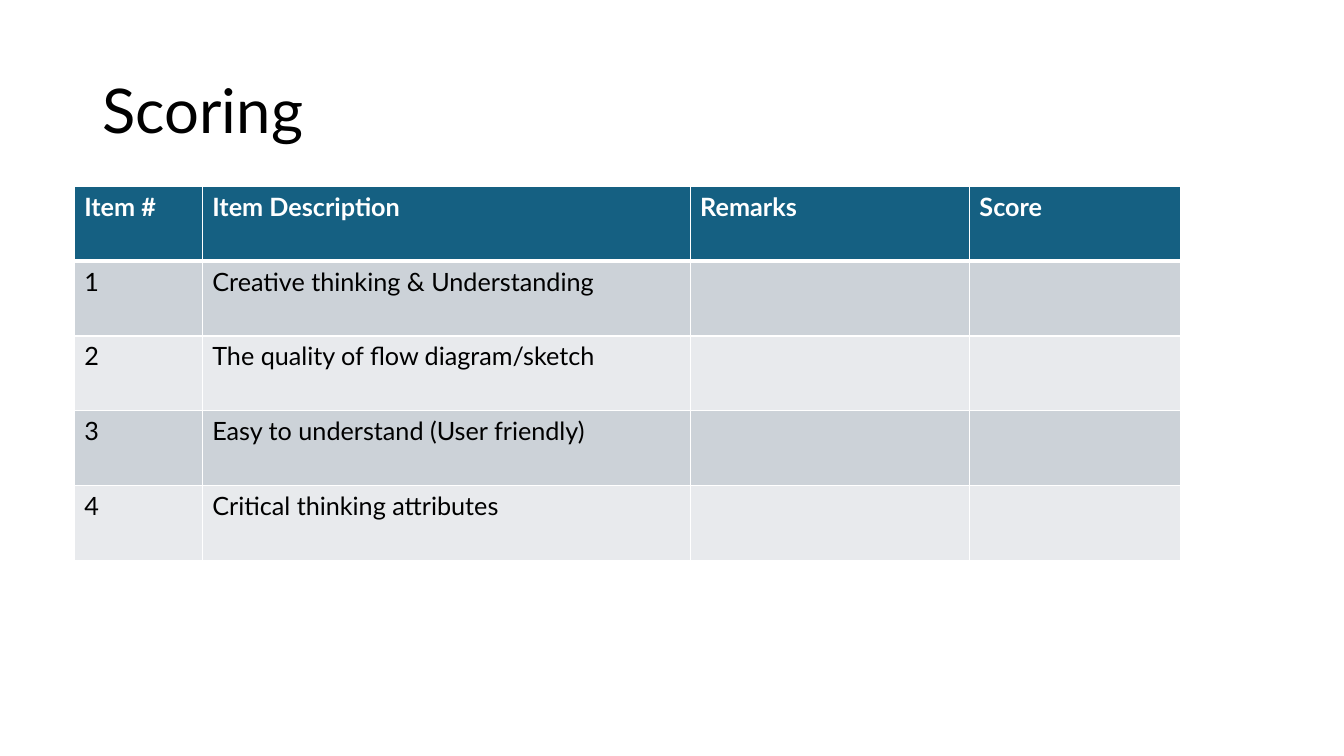
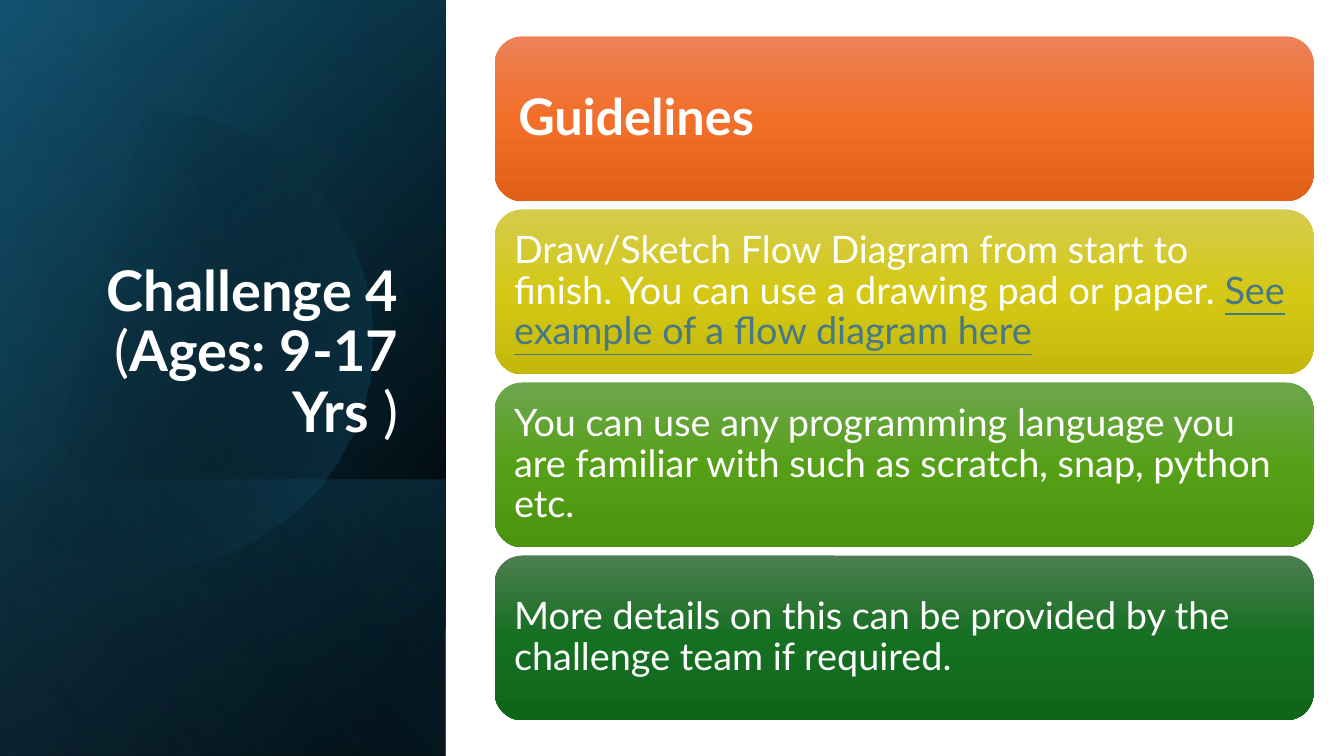
import math

import pptx
import pptx.util
import pptx.dml.color
import pptx.enum.shapes
import pptx.enum.text
import pptx.oxml
import pptx.oxml.ns

Pt = pptx.util.Pt
RGBColor = pptx.dml.color.RGBColor
Shape = pptx.enum.shapes.MSO_SHAPE
Anchor = pptx.enum.text.MSO_ANCHOR
Align = pptx.enum.text.PP_ALIGN
qn = pptx.oxml.ns.qn

# Shared style
FONT = "Lato"
SLIDE_W, SLIDE_H = 960, 540
TITLE_ONLY = 5
BLACK = RGBColor(0x00, 0x00, 0x00)
WHITE = RGBColor(0xFF, 0xFF, 0xFF)
TEAL = RGBColor(0x15, 0x60, 0x82)
DEEP_TEAL = RGBColor(0x10, 0x48, 0x62)
SKY = RGBColor(0x46, 0xB1, 0xE1)
LINK = RGBColor(0x46, 0x78, 0x86)
ROW_DARK = RGBColor(0xCC, 0xD2, 0xD8)
ROW_LIGHT = RGBColor(0xE8, 0xEA, 0xED)
ORANGES = [RGBColor(0xED, 0x82, 0x57), RGBColor(0xF2, 0x6E, 0x29), RGBColor(0xE2, 0x5F, 0x1A)]
YELLOWS = [RGBColor(0xD5, 0xCB, 0x4E), RGBColor(0xD4, 0xC8, 0x15), RGBColor(0xC4, 0xB9, 0x0B)]
LIMES = [RGBColor(0x6D, 0xA6, 0x4E), RGBColor(0x56, 0xA0, 0x17), RGBColor(0x4C, 0x93, 0x0F)]
GREENS = [RGBColor(0x4D, 0x7E, 0x50), RGBColor(0x15, 0x6F, 0x21), RGBColor(0x0F, 0x66, 0x1B)]

# Content
SCORING_ROWS = [
    ["Item #", "Item Description", "Remarks", "Score"],
    ["1", "Creative thinking & Understanding", "", ""],
    ["2", "The quality of flow diagram/sketch", "", ""],
    ["3", "Easy to understand (User friendly)", "", ""],
    ["4", "Critical thinking attributes", "", ""],
]
SCORING_COLUMNS = [91.5, 348.5, 199.5, 150.5]
CHALLENGE = [("Challenge 4", {"bold": True}), (" (", {}),
             ("Ages: 9-17 Yrs", {"bold": True}), (" )", {})]
HEADING = {"size": 36, "inset": 11}
GUIDELINES = [
    (ORANGES, [("Guidelines", {"bold": True})], HEADING),
    (YELLOWS, [("Draw/Sketch Flow Diagram from start to finish. "
                "You can use a drawing pad or paper. ", {}),
               ("See example of a flow diagram here",
                {"color": LINK, "underline": True})], {}),
    (LIMES, [("You can use any programming language you are familiar with "
              "such as scratch, snap, python etc.", {})], {}),
    (GREENS, [("More details on this can be provided by the challenge team "
               "if required.", {})], {}),
]


def write_text(frame, runs, size=18, color=BLACK, align=Align.LEFT, spacing=None):
    """Fill the frame with one paragraph of (text, overrides) runs."""
    paragraph = frame.paragraphs[0]
    paragraph.alignment = align
    paragraph.line_spacing = spacing
    for text, overrides in runs:
        run = paragraph.add_run()
        run.text = text
        font = run.font
        font.name, font.size = FONT, Pt(size)
        font.bold = overrides.get("bold", False)
        font.underline = overrides.get("underline")
        font.color.rgb = overrides.get("color", color)


def set_frame(frame, anchor, inset=None):
    frame.word_wrap = True
    frame.auto_size = pptx.enum.text.MSO_AUTO_SIZE.NONE
    frame.vertical_anchor = anchor
    if inset is not None:
        frame.margin_left = frame.margin_right = Pt(inset)
        frame.margin_top = frame.margin_bottom = Pt(inset)


def place(shape, box):
    shape.left, shape.top, shape.width, shape.height = map(Pt, box)


def fill_gradient(shape, stops, angle):
    """Stops are (position %, colour, opacity %); the angle runs clockwise."""
    shape.shadow.inherit = False
    shape.line.fill.background()
    shape.fill.gradient()
    gradient = shape._element.spPr.find(qn("a:gradFill"))
    stop_list = gradient.find(qn("a:gsLst"))
    stop_list.clear()
    for position, color, opacity in stops:
        stop_list.append(pptx.oxml.parse_xml(
            f'<a:gs {pptx.oxml.ns.nsdecls("a")} pos="{position * 1000}">'
            f'<a:srgbClr val="{color}"><a:alpha val="{opacity * 1000}"/>'
            '</a:srgbClr></a:gs>'))
    gradient.find(qn("a:lin")).set("ang", str(angle * 60000))


def add_title(slide, box, runs, anchor=Anchor.MIDDLE, **style):
    title = slide.shapes.title
    place(title, box)
    set_frame(title.text_frame, anchor)
    write_text(title.text_frame, runs, spacing=0.9, **style)
    # Bring the title in front of whatever is already on the slide
    slide.shapes._spTree.append(title._element)


def set_borders(cell, bottom):
    properties = cell._tc.get_or_add_tcPr()
    for side, width in (("L", 1), ("R", 1), ("T", 1), ("B", bottom)):
        properties.append(pptx.oxml.parse_xml(
            f'<a:ln{side} {pptx.oxml.ns.nsdecls("a")} w="{Pt(width)}">'
            f'<a:solidFill><a:srgbClr val="{WHITE}"/></a:solidFill></a:ln{side}>'))


def add_score_table(slide, box):
    table = slide.shapes.add_table(
        len(SCORING_ROWS), len(SCORING_COLUMNS), *map(Pt, box)).table
    for column, width in zip(table.columns, SCORING_COLUMNS):
        column.width = Pt(width)
    for r, row in enumerate(SCORING_ROWS):
        header = r == 0
        row_fill = TEAL if header else (ROW_LIGHT, ROW_DARK)[r % 2]
        for c, text in enumerate(row):
            cell = table.cell(r, c)
            set_borders(cell, bottom=3 if header else 1)
            cell.fill.solid()
            cell.fill.fore_color.rgb = row_fill
            if text:
                write_text(cell.text_frame, [(text, {"bold": header})],
                           color=WHITE if header else BLACK)


def add_disc(slide, center_x, center_y, radius, left_edge):
    """A disc cut off along the panel's left edge."""
    cut = math.acos((left_edge - center_x) / radius)
    steps = 120
    rim = []
    for i in range(steps + 1):
        turn = cut * (2 * i / steps - 1)
        rim.append((center_x + radius * math.cos(turn),
                    center_y + radius * math.sin(turn)))
    builder = slide.shapes.build_freeform(*rim[0], scale=Pt(1))
    builder.add_line_segments(rim[1:], close=True)
    fill_gradient(builder.convert_to_shape(),
                  [(29, BLACK, 0), (100, TEAL, 43)], 15)


def add_panel(slide, box):
    """Dark side panel made of layered gradients."""
    left, top, width, height = box

    def add_layer(start, stops, angle):
        layer = slide.shapes.add_shape(Shape.RECTANGLE, 0, 0, 0, 0)
        place(layer, (left, top + start, width, height - start))
        fill_gradient(layer, stops, angle)

    add_layer(0, [(8, BLACK, 100), (100, DEEP_TEAL, 100)], 220)
    add_layer(0, [(0, BLACK, 0), (99, TEAL, 46)], 240)
    add_layer(342.7, [(2, TEAL, 29), (100, BLACK, 30)], 140)
    add_disc(slide, left + 103, top + 242.6, 163.5, left)
    add_layer(0, [(0, BLACK, 0), (99, SKY, 11)], 150)


def add_guidelines(slide, box, gap=6):
    left, top, width, height = box
    card_height = (height + gap) / len(GUIDELINES) - gap
    for i, (shades, runs, style) in enumerate(GUIDELINES):
        card = slide.shapes.add_shape(Shape.ROUNDED_RECTANGLE, 0, 0, 0, 0)
        place(card, (left, top + i * (card_height + gap), width, card_height))
        fill_gradient(card, [(p, shade, 100) for p, shade in zip((0, 50, 100), shades)], 90)
        set_frame(card.text_frame, Anchor.MIDDLE, style.get("inset", 8))
        write_text(card.text_frame, runs, size=style.get("size", 27),
                   color=WHITE, spacing=0.9)


def build_scoring(slide):
    add_title(slide, (66, 28.75, 828, 104.4), [("Scoring", {})], size=44)
    add_score_table(slide, (53, 133.2, 790, 267))


def build_challenge(slide):
    add_panel(slide, (0, 0, 318.4, SLIDE_H))
    add_title(slide, (46, 132.5, 245.5, 188.6), CHALLENGE, Anchor.BOTTOM,
              size=40, color=WHITE, align=Align.RIGHT)
    add_guidelines(slide, (353.5, 26, 584.8, 488.4))


def main():
    deck = pptx.Presentation()
    deck.slide_width, deck.slide_height = Pt(SLIDE_W), Pt(SLIDE_H)
    for build in (build_scoring, build_challenge):
        build(deck.slides.add_slide(deck.slide_layouts[TITLE_ONLY]))
    deck.save("out.pptx")


if __name__ == "__main__":
    main()
